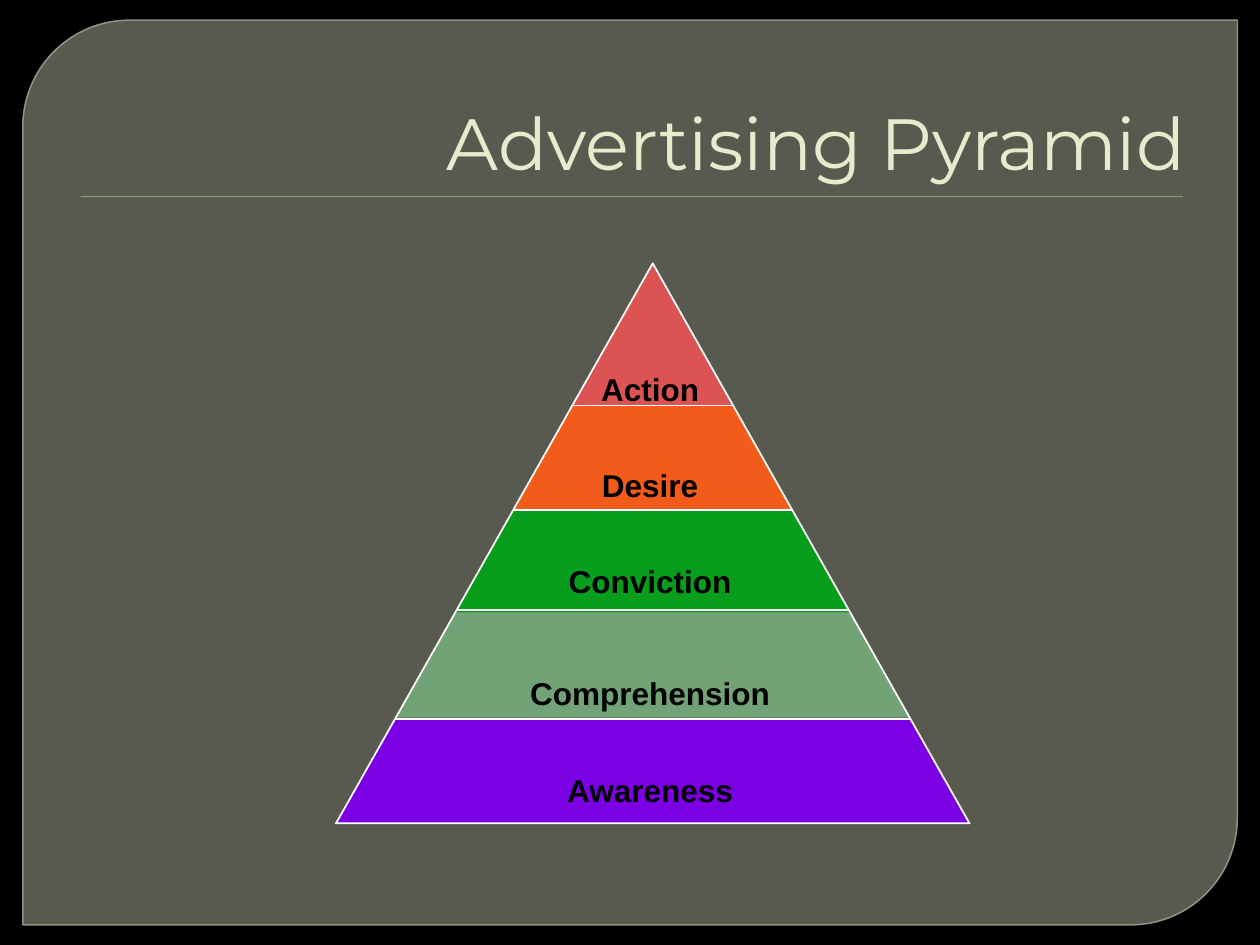
from pptx import Presentation
from pptx.dml.color import RGBColor
from pptx.enum.shapes import MSO_CONNECTOR, MSO_SHAPE
from pptx.enum.text import MSO_ANCHOR, PP_ALIGN
from pptx.oxml.ns import qn
from pptx.util import Pt
from lxml import etree

BLACK = RGBColor(0x00, 0x00, 0x00)
WHITE = RGBColor(0xFF, 0xFF, 0xFF)
OLIVE = RGBColor(0x88, 0x8B, 0x7B)
EDGE = RGBColor(0x9D, 0xA0, 0x90)
CREAM = RGBColor(0xE7, 0xEA, 0xCB)
SAGE = RGBColor(0x72, 0xA3, 0x76)
GREEN = RGBColor(0x09, 0x9D, 0x1E)
ORANGE = RGBColor(0xF3, 0x5B, 0x1B)
RED = RGBColor(0xDB, 0x53, 0x53)
PURPLE = RGBColor(0x7B, 0x00, 0xE4)

FRAME = MSO_SHAPE.ROUND_2_DIAG_RECTANGLE
RECTANGLE = MSO_SHAPE.RECTANGLE
TRIANGLE = MSO_SHAPE.ISOSCELES_TRIANGLE
STRAIGHT = MSO_CONNECTOR.STRAIGHT
CENTER, RIGHT = PP_ALIGN.CENTER, PP_ALIGN.RIGHT
TOP, BOTTOM = MSO_ANCHOR.TOP, MSO_ANCHOR.BOTTOM

APEX_X, APEX_Y = 373, 150.5
BASE_Y, HALF_BASE = 470.5, 181
BANDS = [
    (290, 406, GREEN),
    (229, 291.6, ORANGE),
    (APEX_Y, 231.8, RED),
    (350, 410, SAGE),
    (411, BASE_Y, PURPLE),
]
DIVIDERS = [411, 291.6, 231.8, 348.5]
STAGES = [("Action", 0), ("Desire", 28), ("Conviction", 28),
          ("Comprehension", 37), ("Awareness", 28)]


class PyramidSlide:
    """Draws styled elements, measured in points, on one slide."""

    def __init__(self, slide):
        self.slide = slide
        slide.background.fill.solid()
        slide.background.fill.fore_color.rgb = BLACK

    def set_alpha(self, fill, percent):
        color = fill._xPr.find(qn("a:solidFill"))[0]
        etree.SubElement(color, qn("a:alpha")).set("val", str(percent * 1000))

    def paint(self, shape, fill=None, line=None, weight=1):
        shape.shadow.inherit = False
        for target, color in ((shape.fill, fill), (shape.line.fill, line)):
            if color is None:
                target.background()
            else:
                target.solid()
                target.fore_color.rgb = color
        if line is not None:
            shape.line.width = Pt(weight)
        return shape

    def shape(self, kind, left, top, width, height, **style):
        box = map(Pt, (left, top, width, height))
        return self.paint(self.slide.shapes.add_shape(kind, *box), **style)

    def edges(self, y):
        half = HALF_BASE * (y - APEX_Y) / (BASE_Y - APEX_Y)
        return APEX_X - half, APEX_X + half

    def band(self, top, bottom, color):
        top_left, top_right = self.edges(top)
        bottom_left, bottom_right = self.edges(bottom)
        outline = self.slide.shapes.build_freeform(Pt(bottom_left), Pt(bottom))
        corners = [(bottom_right, bottom), (top_right, top), (top_left, top)]
        outline.add_line_segments([(Pt(x), Pt(y)) for x, y in corners])
        self.paint(outline.convert_to_shape(), fill=color)

    def divider(self, y):
        left, right = self.edges(y)
        line = self.slide.shapes.add_connector(
            STRAIGHT, Pt(left), Pt(y), Pt(right), Pt(y))
        line.line.color.rgb = WHITE
        line.line.width = Pt(1)
        etree.SubElement(line._element.spPr, qn("a:effectLst"))

    def text(self, box, lines, font, size, color, bold=False, align=CENTER,
             anchor=TOP, spacing=1.0, inset_top=3.6):
        frame = self.slide.shapes.add_textbox(*map(Pt, box)).text_frame
        frame.word_wrap = True
        frame.vertical_anchor = anchor
        frame.margin_top = Pt(inset_top)
        for index, (words, gap) in enumerate(lines):
            paragraph = frame.add_paragraph() if index else frame.paragraphs[0]
            paragraph.alignment = align
            paragraph.line_spacing = spacing
            paragraph.space_before = Pt(gap)
            run = paragraph.add_run()
            run.text = words
            run.font.name = font
            run.font.size = Pt(size)
            run.font.bold = bold
            run.font.color.rgb = color


def main():
    deck = Presentation()
    deck.slide_width, deck.slide_height = Pt(720), Pt(540)
    page = PyramidSlide(deck.slides.add_slide(deck.slide_layouts[6]))

    frame = page.shape(FRAME, 13, 11.5, 694, 517, fill=OLIVE, line=EDGE, weight=0.87)
    frame.adjustments[0], frame.adjustments[1] = 0.118, 0
    page.set_alpha(frame.fill, 65)
    page.set_alpha(frame.line.fill, 88)
    page.shape(RECTANGLE, 46, 112, 630, 0.7, fill=SAGE)

    for top, bottom, color in BANDS:
        page.band(top, bottom, color)
    page.text((282, 174, 179, 335), STAGES, "Arial", 18, BLACK, bold=True,
              spacing=1.25, inset_top=32)
    page.text((102, 54, 582.5, 56), [("Advertising Pyramid", 0)], "Montserrat",
              41.4, CREAM, align=RIGHT, anchor=BOTTOM, spacing=0.89)
    page.shape(TRIANGLE, APEX_X - HALF_BASE, APEX_Y, 2 * HALF_BASE,
               BASE_Y - APEX_Y, line=WHITE)
    for y in DIVIDERS:
        page.divider(y)

    deck.save("out.pptx")


if __name__ == "__main__":
    main()
